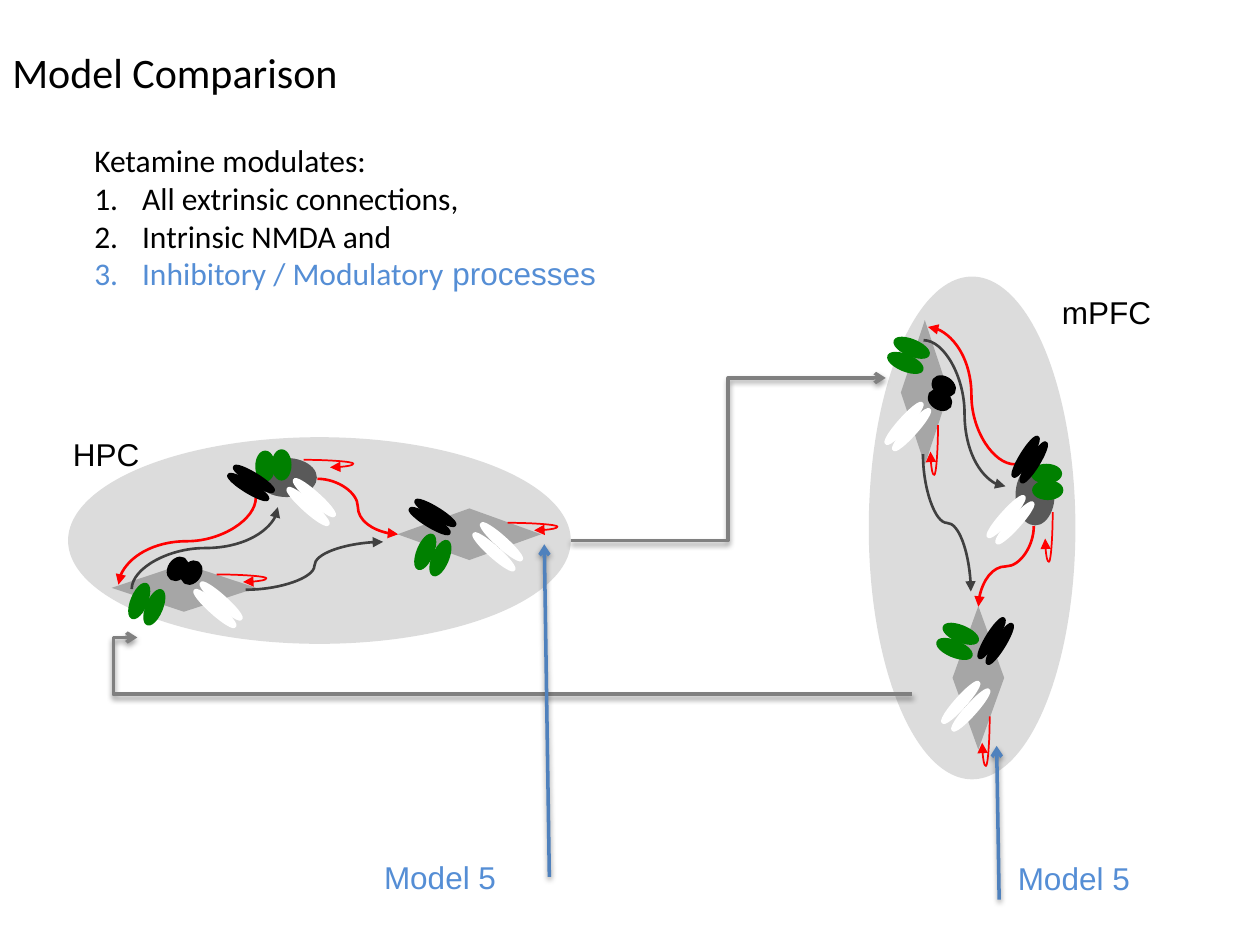
from lxml.etree import SubElement
from pptx import Presentation
from pptx.dml.color import RGBColor
from pptx.enum.shapes import MSO_CONNECTOR, MSO_SHAPE
from pptx.oxml.ns import qn
from pptx.util import Inches, Pt

COLOURS = {
    "region": "262626", "cell": "A6A6A6", "interneuron": "595959",
    "forward": "404040", "inhibit": "FF0000", "extrinsic": "808080",
    "green": "008000", "black": "000000", "white": "FFFFFF",
    "model_arrow": "4F81BD", "model_text": "558ED5",
}
RGB = {name: RGBColor.from_string(value) for name, value in COLOURS.items()}

prs = Presentation()
prs.slide_width, prs.slide_height = Inches(10), Inches(7.5)
slide = prs.slides.add_slide(prs.slide_layouts[6])
shapes = slide.shapes


def add_text(box, paragraphs, size=18, wrap=False, margin_top=0.05):
    """Each paragraph is (numbered, [(text, font, colour), ...])."""
    frame = shapes.add_textbox(*map(Inches, box)).text_frame
    frame.word_wrap = wrap
    frame.margin_top = Inches(margin_top)
    for i, (numbered, runs) in enumerate(paragraphs):
        para = frame.add_paragraph() if i else frame.paragraphs[0]
        if numbered:
            props = para._p.get_or_add_pPr()
            props.set("marL", str(Inches(0.38)))
            props.set("indent", str(-Inches(0.38)))
            SubElement(props, qn("a:buAutoNum"), type="arabicPeriod")
        for text, font, colour in runs:
            run = para.add_run()
            run.text = text
            run.font.name, run.font.size = font, Pt(size)
            run.font.color.rgb = RGB[colour]


def style_line(line, colour, width, end, arrow, adjust=None, shadow=False):
    line.line.color.rgb = RGB[colour]
    line.line.width = Pt(width)
    props = line._element.spPr
    SubElement(props.find(qn("a:ln")), qn(f"a:{end}"), type=arrow)
    if adjust is not None:
        guides = props.find(qn("a:prstGeom")).find(qn("a:avLst"))
        SubElement(guides, qn("a:gd"), name="adj1", fmla=f"val {adjust}")
    effects = SubElement(props, qn("a:effectLst"))
    if shadow:
        outer = SubElement(effects, qn("a:outerShdw"), blurRad="40000",
                           dist="20000", dir="5400000", rotWithShape="0")
        black = SubElement(outer, qn("a:srgbClr"), val=COLOURS["black"])
        SubElement(black, qn("a:alpha"), val="38000")


# One region, in HPC coordinates: centre x, centre y, width, height, rotation
HPC_CENTRE = (2.535, 4.29)
bodies = [
    (MSO_SHAPE.OVAL, "region", *HPC_CENTRE, 3.99, 1.64, 0),
    (MSO_SHAPE.FLOWCHART_DECISION, "cell", 3.725, 4.24, 0.41, 1.14, 270),
    (MSO_SHAPE.FLOWCHART_DECISION, "cell", 1.46, 4.665, 0.38, 1.15, 270),
    (MSO_SHAPE.OVAL, "interneuron", 2.275, 3.79, 0.31, 0.48, 270),
]
pathways = [
    ("forward", 2.495, 4.49, 1.09, 0.38, 180, "v"),
    ("forward", 1.625, 4.35, 0.65, 1.16, 90, ""),
    ("inhibit", 2.84, 4.02, 0.64, 0.44, 180, ""),
    ("inhibit", 1.485, 4.295, 0.69, 1.09, 270, ""),
]
self_loops = [("inhibit", x, y, 0.21, 0.06, 0, "hv")
              for x, y in [(4.135, 4.18), (1.825, 4.59), (2.515, 3.68)]]

# Receptor pairs: colour, width, height, rotation, then the centres
receptors = [
    ("green", 0.13, 0.22, 0, [(2.105, 3.7), (2.235, 3.69)]),
    ("black", 0.18, 0.13, 122.8, [(1.52, 4.545), (1.41, 4.515)]),
    ("green", 0.11, 0.28, 22.6, [(3.375, 4.38), (3.495, 4.43),
                                 (1.105, 4.77), (1.225, 4.82)]),
    ("black", 0.36, 0.07, 211.7, [(1.97, 3.865), (2.015, 3.8),
                                  (3.41, 4.135), (3.455, 4.07)]),
    ("white", 0.07, 0.42, 131.8, [(3.98, 4.3), (3.92, 4.38),
                                  (1.755, 4.77), (1.705, 4.83),
                                  (2.495, 3.95), (2.445, 4.02)]),
]
receptor_ovals = [(MSO_SHAPE.OVAL, colour, x, y, w, h, rotation)
                  for colour, w, h, rotation, centres in receptors
                  for x, y in centres]

# HPC, and mPFC as the same circuit turned by a quarter
for (centre_x, centre_y), turn in [(HPC_CENTRE, 0), ((7.715, 4.19), 90)]:
    for parts in (bodies, pathways, self_loops, receptor_ovals):
        for part in parts:
            is_curve = parts in (pathways, self_loops)
            kind, colour, x, y, w, h, rotation = (
                (None, *part[:6]) if is_curve else part)
            dx, dy = x - HPC_CENTRE[0], y - HPC_CENTRE[1]
            if turn:
                dx, dy = -dy, dx
            left, top = centre_x + dx - w / 2, centre_y + dy - h / 2
            rotation = (rotation + turn) % 360

            if is_curve:
                curve = shapes.add_connector(
                    MSO_CONNECTOR.CURVE, Inches(left), Inches(top),
                    Inches(left + w), Inches(top + h))
                xfrm = curve._element.spPr.find(qn("a:xfrm"))
                xfrm.set("rot", str(rotation * 60000))
                for axis in part[6]:
                    xfrm.set(f"flip{axis.upper()}", "1")
                is_loop = parts is self_loops
                style_line(curve, colour, 1 if is_loop else 1.5, "headEnd",
                           "triangle", -88000 if is_loop else 50000)
                continue

            body = shapes.add_shape(kind, Inches(left), Inches(top),
                                    Inches(w), Inches(h))
            body.rotation = rotation
            body.shadow.inherit = False
            body.fill.solid()
            body.fill.fore_color.rgb = RGB[colour]
            if parts is receptor_ovals:
                body.line.color.rgb = RGB[colour]
                body.line.width = Pt(2)
            else:
                body.line.fill.background()
            if colour == "region":
                fill = body._element.spPr.find(qn("a:solidFill"))
                SubElement(fill[0], qn("a:alpha"), val="16000")

# Extrinsic connections and model arrows
for kind, colour, start, finish, adjust in [
    (MSO_CONNECTOR.ELBOW, "extrinsic", (7.24, 5.51), (1.09, 5.06), 103100),
    (MSO_CONNECTOR.ELBOW, "extrinsic", (4.53, 4.29), (7.03, 3), 50000),
    (MSO_CONNECTOR.STRAIGHT, "model_arrow", (4.36, 6.96), (4.32, 4.32), None),
    (MSO_CONNECTOR.STRAIGHT, "model_arrow", (7.93, 7.14), (7.91, 5.92), None),
]:
    link = shapes.add_connector(kind, *map(Inches, start + finish))
    style_line(link, colour, 2, "tailEnd", "arrow", adjust, shadow=True)

# Labels
for label, box, colour in [
    ("HPC", (0.48, 3.4, 0.73, 0.4), "black"),
    ("mPFC", (8.33, 2.28, 0.92, 0.4), "black"),
    ("Model 5", (2.95, 6.76, 1.1, 0.4), "model_text"),
    ("Model 5", (7.98, 6.77, 1.1, 0.4), "model_text"),
]:
    add_text(box, [(False, [(label, "Arial", colour)])])

# Hypotheses and title
add_text((0.65, 1.07, 6.04, 1.31), [
    (False, [("Ketamine modulates:", "Calibri", "black")]),
    (True, [("All extrinsic connections,", "Calibri", "black")]),
    (True, [("Intrinsic NMDA and", "Calibri", "black")]),
    (True, [("Inhibitory / Modulatory", "Calibri", "model_text"),
            (" processes", "Arial", "model_text")]),
], wrap=True)
add_text((0, 0.19, 8.67, 1.25),
         [(False, [("Model Comparison", "Calibri", "black")])],
         size=24, wrap=True, margin_top=0.18)

prs.save("out.pptx")
